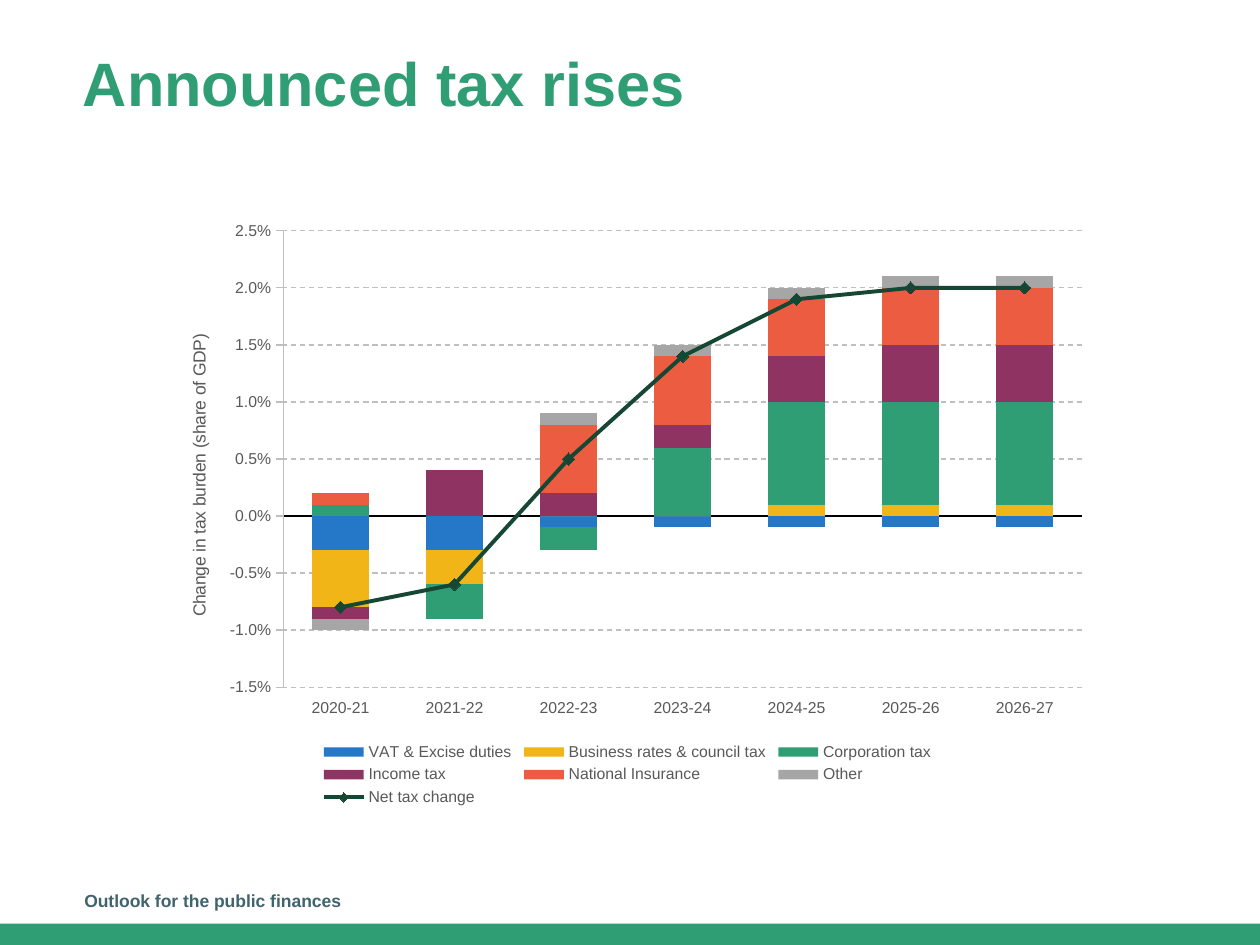
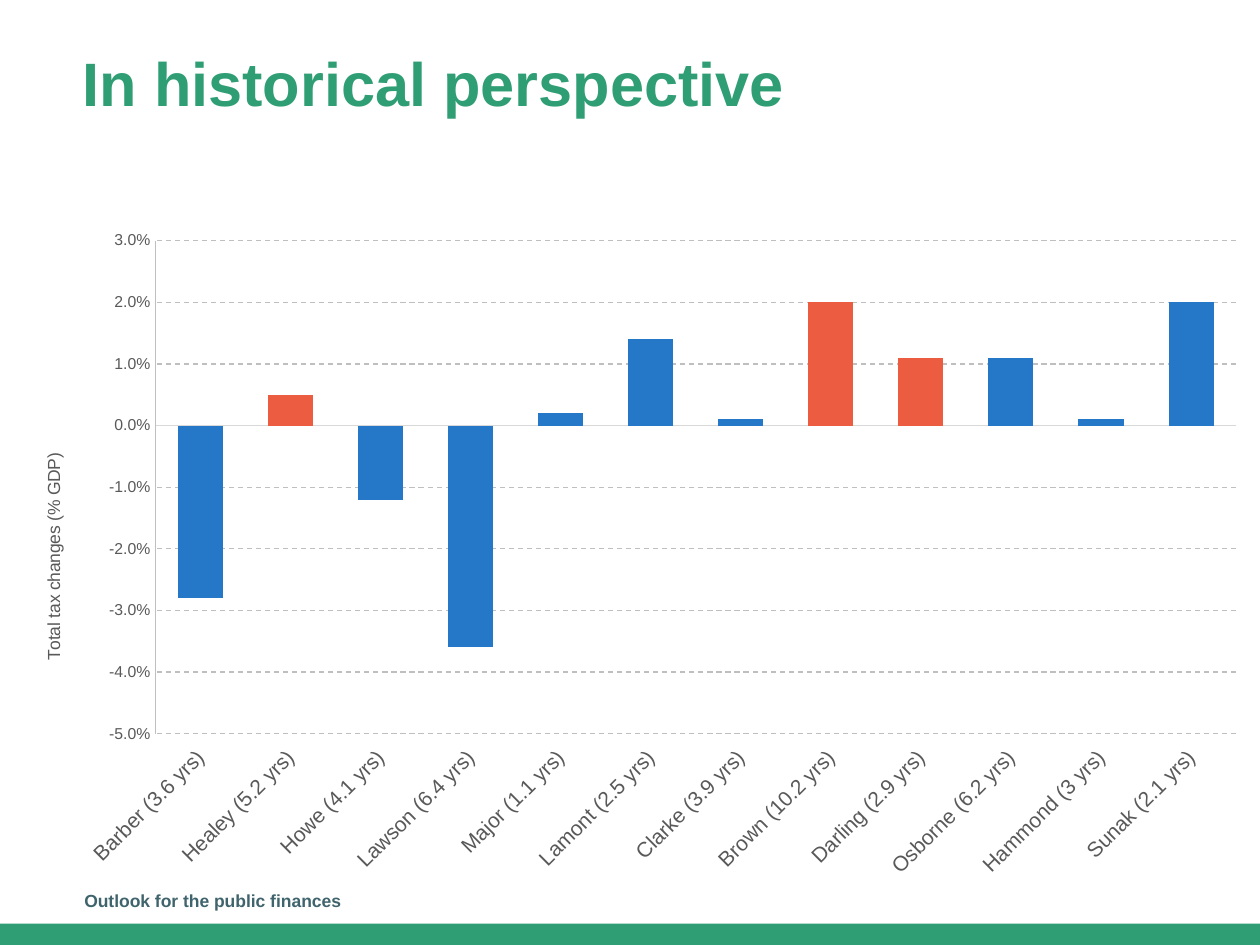
"""Build two slides of charts on announced and historical tax changes."""
from dataclasses import dataclass
from typing import Optional

from pptx import Presentation
from pptx.chart.data import CategoryChartData
from pptx.dml.color import RGBColor
from pptx.enum.chart import (XL_CHART_TYPE, XL_LEGEND_POSITION, XL_MARKER_STYLE,
                             XL_TICK_LABEL_POSITION, XL_TICK_MARK)
from pptx.enum.dml import MSO_LINE
from pptx.enum.shapes import MSO_SHAPE
from pptx.enum.text import MSO_ANCHOR
from pptx.oxml import parse_xml
from pptx.oxml.ns import nsdecls, qn
from pptx.util import Cm, Pt

STACKED = XL_CHART_TYPE.COLUMN_STACKED
CLUSTERED = XL_CHART_TYPE.COLUMN_CLUSTERED
BOTTOM_LEGEND = XL_LEGEND_POSITION.BOTTOM
DIAMOND = XL_MARKER_STYLE.DIAMOND
LOW = XL_TICK_LABEL_POSITION.LOW
NO_TICK, OUTSIDE_TICK = XL_TICK_MARK.NONE, XL_TICK_MARK.OUTSIDE
DASH = MSO_LINE.DASH
RECTANGLE = MSO_SHAPE.RECTANGLE
MIDDLE, BOTTOM = MSO_ANCHOR.MIDDLE, MSO_ANCHOR.BOTTOM

FONT = "Arial"
COLORS = {
    "green": "309E75", "slate": "40646D", "label": "595959", "grid": "BFBFBF",
    "pale": "D9D9D9", "black": "000000", "blue": "2478C7", "yellow": "F2B517",
    "purple": "8F3363", "red": "EB5C40", "grey": "A6A6A6", "dark": "164735",
}


@dataclass(frozen=True)
class Frame:
    """Position and size in centimetres."""
    left: float
    top: float
    width: float
    height: float

    def lengths(self) -> tuple:
        """Return the four lengths for python-pptx."""
        return Cm(self.left), Cm(self.top), Cm(self.width), Cm(self.height)


@dataclass(frozen=True)
class Label:
    """Style and place of a line of text."""
    frame: Frame
    size: float
    color: str
    anchor: MSO_ANCHOR
    spacing: float = 1.0


@dataclass(frozen=True)
class Series:
    """Name, colour and values of a chart series."""
    name: str
    color: str
    values: tuple


@dataclass(frozen=True)
class TaxChart:
    """Content and settings of a column chart."""
    frame: Frame
    kind: XL_CHART_TYPE
    categories: list
    series: list
    axis_title: str
    title_place: tuple
    plot_place: tuple
    limits: tuple
    step: float
    overlap: int
    category_size: float
    category_line: str
    value_tick: XL_TICK_MARK
    label_rotation: Optional[int] = None
    legend_place: Optional[tuple] = None


TITLE = Label(Frame(1.42, 0.94, 19, 1.6), 35, "green", BOTTOM, 0.9)
FOOTER = Label(Frame(1.45, 17.65, 8.59, 1.02), 10, "slate", MIDDLE)
BAND = Frame(0, 18.62, 25.4, 0.43)
FOOTER_TEXT = "Outlook for the public finances"

ANNOUNCED = TaxChart(
    frame=Frame(3.15, 4.24, 19, 12.17),
    kind=STACKED,
    categories=[f"{year}-{year % 100 + 1}" for year in range(2020, 2027)],
    series=[
        Series("VAT & Excise duties", "blue",
               (-0.003, -0.003, -0.001, -0.001, -0.001, -0.001, -0.001)),
        Series("Business rates & council tax", "yellow",
               (-0.005, -0.003, 0, 0, 0.001, 0.001, 0.001)),
        Series("Corporation tax", "green",
               (0.001, -0.003, -0.002, 0.006, 0.009, 0.009, 0.009)),
        Series("Income tax", "purple",
               (-0.001, 0.004, 0.002, 0.002, 0.004, 0.005, 0.005)),
        Series("National Insurance", "red",
               (0.001, 0, 0.006, 0.006, 0.005, 0.005, 0.005)),
        Series("Other", "grey",
               (-0.001, 0, 0.001, 0.001, 0.001, 0.001, 0.001)),
        Series("Net tax change", "dark",
               (-0.008, -0.006, 0.005, 0.014, 0.019, 0.02, 0.02)),
    ],
    axis_title="Change in tax burden (share of GDP)",
    title_place=(0.03, 0.2),
    plot_place=(0.135, 0.034, 0.847, 0.756),
    limits=(-0.015, 0.025),
    step=0.005,
    overlap=100,
    category_size=9,
    category_line="black",
    value_tick=OUTSIDE_TICK,
    legend_place=(0.17, 0.875, 0.66, 0.12),
)

CHANCELLORS = [
    ("Barber (3.6 yrs)", -0.028), ("Healey (5.2 yrs)", 0.005),
    ("Howe (4.1 yrs)", -0.012), ("Lawson (6.4 yrs)", -0.036),
    ("Major (1.1 yrs)", 0.002), ("Lamont (2.5 yrs)", 0.014),
    ("Clarke (3.9 yrs)", 0.001), ("Brown (10.2 yrs)", 0.02),
    ("Darling (2.9 yrs)", 0.011), ("Osborne (6.2 yrs)", 0.011),
    ("Hammond (3 yrs)", 0.001), ("Sunak (2.1 yrs)", 0.02),
]
LABOUR = ("Healey", "Brown", "Darling")

HISTORICAL = TaxChart(
    frame=Frame(0.18, 4.42, 25.22, 13.56),
    kind=CLUSTERED,
    categories=[name for name, _ in CHANCELLORS],
    series=[Series("Series 1", "blue", tuple(value for _, value in CHANCELLORS))],
    axis_title="Total tax changes (% GDP)",
    title_place=(0.024, 0.343),
    plot_place=(0.117, 0.032, 0.864, 0.733),
    limits=(-0.05, 0.03),
    step=0.01,
    overlap=-27,
    category_size=12,
    category_line="pale",
    value_tick=NO_TICK,
    label_rotation=-45,
)


def rgb(name: str) -> RGBColor:
    """Return a palette colour."""
    return RGBColor.from_string(COLORS[name])


def style_font(font, size: float, color: str, bold: bool = False) -> None:
    """Set typeface, size, colour and weight."""
    font.name, font.size, font.bold = FONT, Pt(size), bold
    font.color.rgb = rgb(color)


def style_line(line, color: str, width: float = 0.75) -> None:
    """Set colour and width of a line."""
    line.color.rgb = rgb(color)
    line.width = Pt(width)


def fill_with(fill, color: str) -> None:
    """Apply a solid palette fill."""
    fill.solid()
    fill.fore_color.rgb = rgb(color)


def add_label(page, label: Label, text: str) -> None:
    """Add a bold line of text."""
    box = page.shapes.add_textbox(*label.frame.lengths())
    box.text_frame.word_wrap = True
    box.text_frame.vertical_anchor = label.anchor
    para = box.text_frame.paragraphs[0]
    para.line_spacing = label.spacing
    span = para.add_run()
    span.text = text
    style_font(span.font, label.size, label.color, bold=True)


def add_page(deck, title: str):
    """Add a page with its band, title and footer."""
    page = deck.slides.add_slide(deck.slide_layouts[6])
    band = page.shapes.add_shape(RECTANGLE, *BAND.lengths())
    band.shadow.inherit = False
    fill_with(band.fill, "green")
    band.line.fill.background()
    add_label(page, TITLE, title)
    add_label(page, FOOTER, FOOTER_TEXT)
    return page


def set_layout(parent, place: tuple, index: int = 0, inner: bool = False) -> None:
    """Place a chart part by fractions of the chart area."""
    previous = parent.find(qn("c:layout"))
    if previous is not None:
        index = parent.index(previous)
        parent.remove(previous)
    target = '<c:layoutTarget val="inner"/>' if inner else ""
    sizes = "".join(f'<c:{key} val="{value}"/>' for key, value in zip("xywh", place))
    parent.insert(index, parse_xml(
        f'<c:layout {nsdecls("c")}><c:manualLayout>{target}<c:xMode val="edge"/>'
        f'<c:yMode val="edge"/>{sizes}</c:manualLayout></c:layout>'))


def style_axes(chart, tax_chart: TaxChart) -> None:
    """Style both axes, the gridlines and the value title."""
    categories, values = chart.category_axis, chart.value_axis
    categories.tick_label_position = LOW
    categories.major_tick_mark = NO_TICK
    categories.has_major_gridlines = False
    style_font(categories.tick_labels.font, tax_chart.category_size, "label")
    style_line(categories.format.line, tax_chart.category_line)
    if tax_chart.label_rotation is not None:
        body = categories._element.find(qn("c:txPr")).find(qn("a:bodyPr"))
        body.set("rot", str(tax_chart.label_rotation * 60000))
        body.set("vert", "horz")

    values.minimum_scale, values.maximum_scale = tax_chart.limits
    values.major_unit = tax_chart.step
    values.major_tick_mark = tax_chart.value_tick
    values.tick_labels.number_format = "0.0%"
    values.tick_labels.number_format_is_linked = False
    style_font(values.tick_labels.font, 9, "label")
    style_line(values.format.line, "grid")
    gridlines = values.major_gridlines.format.line
    style_line(gridlines, "grid")
    gridlines.dash_style = DASH

    frame = values.axis_title.text_frame
    span = frame.paragraphs[0].add_run()
    span.text = tax_chart.axis_title
    style_font(span.font, 10, "label")
    body = frame._txBody.find(qn("a:bodyPr"))
    body.set("rot", "-5400000")
    body.set("vert", "horz")
    set_layout(values.axis_title._element, tax_chart.title_place, 1)


def add_tax_chart(page, tax_chart: TaxChart):
    """Add a column chart and return it."""
    data = CategoryChartData(number_format="0.0%")
    data.categories = tax_chart.categories
    for series in tax_chart.series:
        data.add_series(series.name, series.values)
    chart = page.shapes.add_chart(tax_chart.kind, *tax_chart.frame.lengths(), data).chart
    style_font(chart.font, 10, "black")
    chart.has_title = False
    chart.has_legend = tax_chart.legend_place is not None
    plot = chart.plots[0]
    plot.vary_by_categories = False
    plot.gap_width, plot.overlap = 100, tax_chart.overlap
    for drawn, series in zip(plot.series, tax_chart.series):
        drawn.invert_if_negative = False
        fill_with(drawn.format.fill, series.color)
    style_axes(chart, tax_chart)
    area = chart._chartSpace.find(qn("c:chart"))
    set_layout(area.find(qn("c:plotArea")), tax_chart.plot_place, inner=True)
    area.addnext(parse_xml(
        f'<c:spPr {nsdecls("c", "a")}><a:solidFill><a:srgbClr val="FFFFFF"/>'
        '</a:solidFill><a:ln><a:noFill/></a:ln></c:spPr>'))
    if tax_chart.legend_place is not None:
        chart.legend.position = BOTTOM_LEGEND
        chart.legend.include_in_layout = False
        style_font(chart.legend.font, 9, "label")
        set_layout(chart.legend._element, tax_chart.legend_place, 1)
    return chart


def turn_last_series_into_line(chart, color: str) -> None:
    """Move the last column series to a marked line on the same axes."""
    columns = chart.plots[0]._element
    series = columns.findall(qn("c:ser"))[-1]
    for tag in ("c:invertIfNegative", "c:spPr"):
        series.remove(series.find(qn(tag)))
    axes = "".join(f'<c:axId val="{axis.get("val")}"/>'
                   for axis in columns.findall(qn("c:axId")))
    line_plot = parse_xml(
        f'<c:lineChart {nsdecls("c")}><c:grouping val="standard"/>'
        f'<c:varyColors val="0"/><c:marker val="1"/>{axes}</c:lineChart>')
    line_plot.insert(2, series)
    columns.addnext(line_plot)
    line = chart.plots[1].series[0]
    line.smooth = False
    style_line(line.format.line, color, 2.25)
    line.marker.style, line.marker.size = DIAMOND, 7
    fill_with(line.marker.format.fill, color)
    style_line(line.marker.format.line, color)


def main() -> None:
    """Build and save the deck."""
    deck = Presentation()
    deck.slide_width, deck.slide_height = Cm(25.4), Cm(19.05)

    announced = add_tax_chart(add_page(deck, "Announced tax rises"), ANNOUNCED)
    turn_last_series_into_line(announced, "dark")

    historical = add_tax_chart(add_page(deck, "In historical perspective"), HISTORICAL)
    bars = historical.plots[0].series[0]
    for index, name in enumerate(HISTORICAL.categories):
        color = "red" if name.startswith(LABOUR) else "blue"
        fill_with(bars.points[index].format.fill, color)

    deck.save("out.pptx")


if __name__ == "__main__":
    main()
